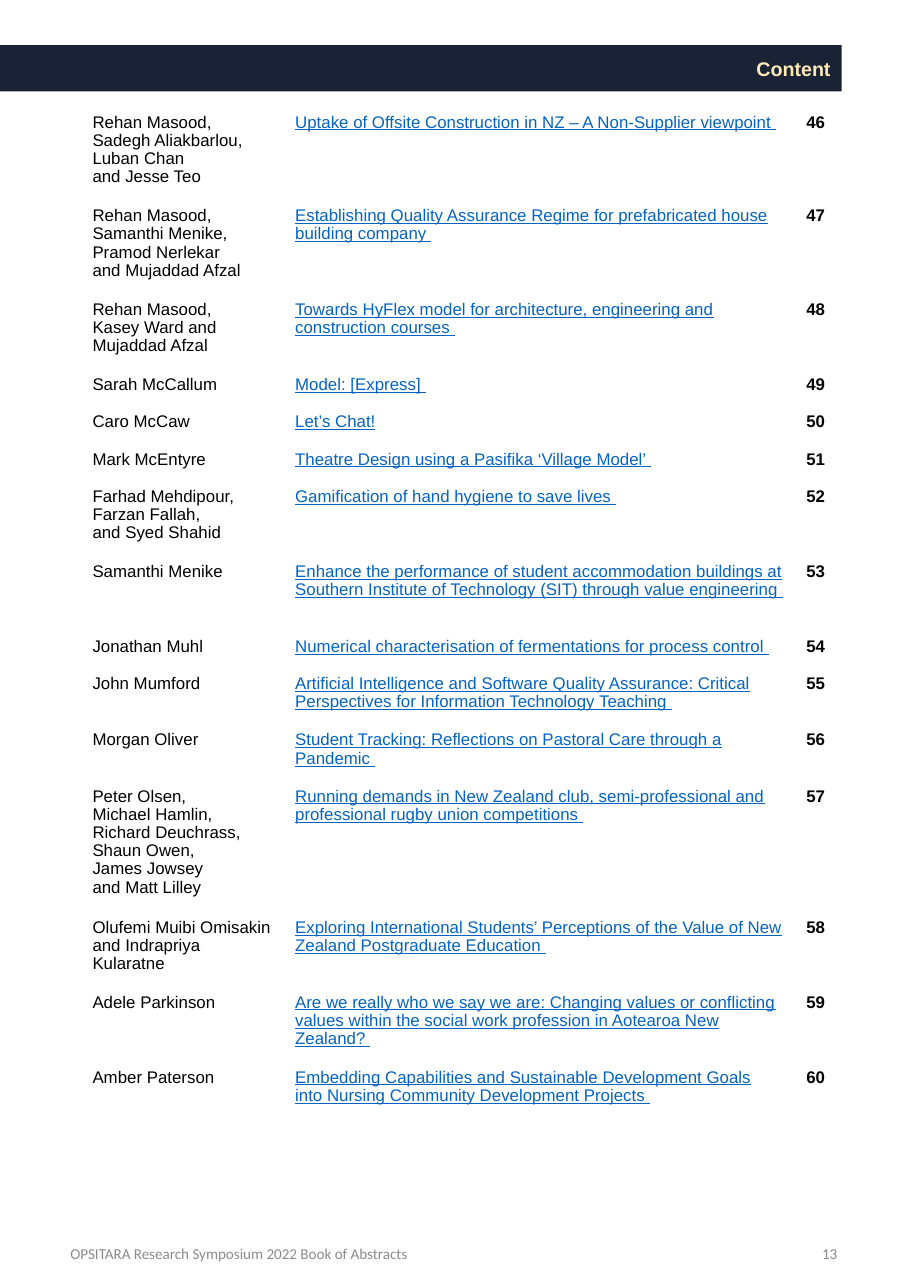
from pptx import Presentation
from pptx.dml.color import RGBColor
from pptx.enum.text import MSO_ANCHOR, MSO_AUTO_SIZE, PP_ALIGN
from pptx.util import Inches, Pt

NAVY = RGBColor(0x1A, 0x22, 0x35)
CREAM = RGBColor(0xFE, 0xE8, 0xB6)
BLACK = RGBColor(0x00, 0x00, 0x00)
LINK_BLUE = RGBColor(0x05, 0x63, 0xC1)
GREY = RGBColor(0x8C, 0x8C, 0x8C)

COLUMN_WIDTHS = (1.94, 4.64, 0.43)
LINE_HEIGHT = 0.17
FIRST_PAGE = 46

ENTRIES = [
    (4, "Rehan Masood, Sadegh Aliakbarlou, Luban Chan\nand Jesse Teo",
     "Uptake of Offsite Construction in NZ – A Non-Supplier viewpoint "),
    (4, "Rehan Masood, Samanthi Menike, Pramod Nerlekar\nand Mujaddad Afzal",
     "Establishing Quality Assurance Regime for prefabricated house building company "),
    (3, "Rehan Masood,\nKasey Ward and Mujaddad Afzal",
     "Towards HyFlex model for architecture, engineering and construction courses "),
    (1, "Sarah McCallum", "Model: [Express] "),
    (1, "Caro McCaw", "Let’s Chat!"),
    (1, "Mark McEntyre", "Theatre Design using a Pasifika ‘Village Model’ "),
    (3, "Farhad Mehdipour, Farzan Fallah,\nand Syed Shahid",
     "Gamification of hand hygiene to save lives "),
    (3, "Samanthi Menike",
     "Enhance the performance of student accommodation buildings at Southern "
     "Institute of Technology (SIT) through value engineering "),
    (1, "Jonathan Muhl",
     "Numerical characterisation of fermentations for process control "),
    (2, "John Mumford",
     "Artificial Intelligence and Software Quality Assurance: Critical "
     "Perspectives for Information Technology Teaching "),
    (2, "Morgan Oliver",
     "Student Tracking: Reflections on Pastoral Care through a Pandemic "),
    (6, "Peter Olsen,\nMichael Hamlin, Richard Deuchrass, Shaun Owen,\n"
        "James Jowsey\nand Matt Lilley",
     "Running demands in New Zealand club, semi-professional and professional "
     "rugby union competitions "),
    (3, "Olufemi Muibi Omisakin and Indrapriya Kularatne",
     "Exploring International Students’ Perceptions of the Value of New Zealand "
     "Postgraduate Education "),
    (3, "Adele Parkinson",
     "Are we really who we say we are: Changing values or conflicting values "
     "within the social work profession in Aotearoa New Zealand? "),
    (2, "Amber Paterson",
     "Embedding Capabilities and Sustainable Development Goals into Nursing "
     "Community Development Projects "),
]


class ContentsPage:
    def __init__(self, presentation):
        self.heading_font = "Arial"
        self.footer_font = "Calibri"
        self.slide = presentation.slides.add_slide(presentation.slide_layouts[5])

    def style(self, paragraph, name, size, color, bold=False, underline=False):
        font = paragraph.font
        font.name, font.size, font.bold, font.underline = name, Pt(size), bold, underline
        font.color.rgb = color

    def title_band(self, text, left, top, width, height):
        title = self.slide.shapes.title
        title.left, title.top = Inches(left), Inches(top)
        title.width, title.height = Inches(width), Inches(height)
        title.fill.solid()
        title.fill.fore_color.rgb = NAVY
        frame = title.text_frame
        frame.text = text
        frame.auto_size = MSO_AUTO_SIZE.NONE
        frame.vertical_anchor = MSO_ANCHOR.MIDDLE
        frame.margin_left = frame.margin_right = Inches(0.1)
        frame.margin_top = frame.margin_bottom = 0
        paragraph = frame.paragraphs[0]
        paragraph.alignment = PP_ALIGN.RIGHT
        self.style(paragraph, self.heading_font, 12.9, CREAM, bold=True)

    def cell(self, cell, text, left_margin, color, **emphasis):
        cell.fill.background()
        cell.text = text
        cell.margin_left, cell.margin_right = Inches(left_margin), Inches(0.1)
        cell.margin_top = cell.margin_bottom = Inches(0.08)
        for paragraph in cell.text_frame.paragraphs:
            paragraph.line_spacing = 0.97
            self.style(paragraph, self.heading_font, 11, color, **emphasis)

    def contents_table(self, entries, left, top):
        heights = [LINE_HEIGHT * (lines + 1) for lines, _, _ in entries]
        table = self.slide.shapes.add_table(
            len(entries), len(COLUMN_WIDTHS), Inches(left), Inches(top),
            Inches(sum(COLUMN_WIDTHS)), Inches(sum(heights))).table
        table.first_row = table.horz_banding = False
        for column, width in zip(table.columns, COLUMN_WIDTHS):
            column.width = Inches(width)
        for index, (_, authors, title) in enumerate(entries):
            row = table.rows[index]
            row.height = Inches(heights[index])
            author_cell, title_cell, page_cell = row.cells
            self.cell(author_cell, authors, 0.21, BLACK)
            self.cell(title_cell, title, 0.11, LINK_BLUE, underline=True)
            self.cell(page_cell, str(FIRST_PAGE + index), 0.11, BLACK, bold=True)

    def footer(self, text, left, width, alignment):
        box = self.slide.shapes.add_textbox(
            Inches(left), Inches(11.07), Inches(width), Inches(0.62))
        frame = box.text_frame
        frame.word_wrap = True
        frame.vertical_anchor = MSO_ANCHOR.MIDDLE
        frame.text = text
        paragraph = frame.paragraphs[0]
        paragraph.alignment = alignment
        self.style(paragraph, self.footer_font, 9.9, GREY)


def main():
    presentation = Presentation()
    presentation.slide_width = Inches(8.27)
    presentation.slide_height = Inches(11.69)
    page = ContentsPage(presentation)
    page.title_band("Content", 0, 0.41, 7.64, 0.42)
    page.contents_table(ENTRIES, 0.63, 0.95)
    page.footer("13", 5.84, 1.86, PP_ALIGN.RIGHT)
    page.footer("OPSITARA Research Symposium 2022 Book of Abstracts",
                0.54, 3.45, PP_ALIGN.LEFT)
    presentation.save("out.pptx")


if __name__ == "__main__":
    main()
